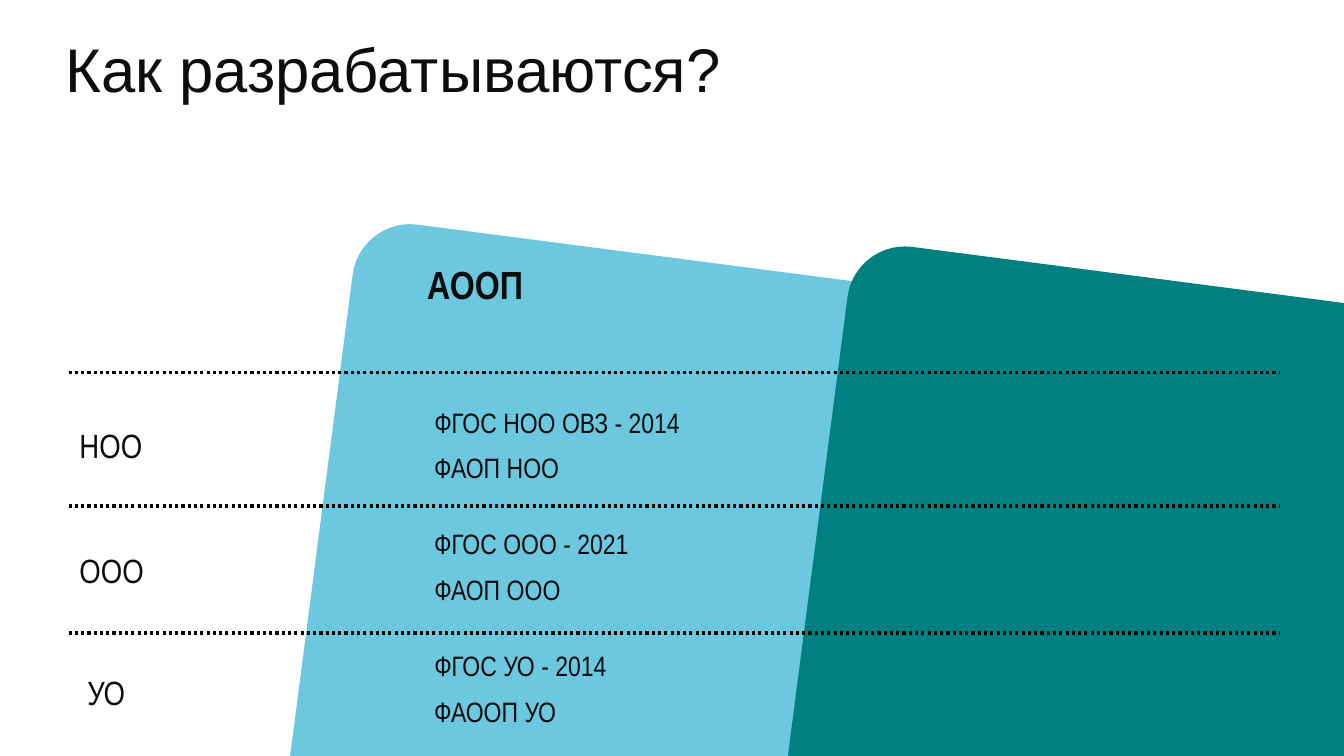
from collections import namedtuple
from dataclasses import dataclass

from lxml import etree
from pptx import Presentation
from pptx import util as u
from pptx.dml.color import RGBColor
from pptx.enum import dml, shapes, text
from pptx.oxml import ns

Box = namedtuple("Box", "left top width height")
Level = namedtuple("Level", "name top width indent sources")


@dataclass(frozen=True)
class Theme:
    ink: str = "0D0D0D"
    rule: str = "000000"
    light_panel: str = "6CC8DE"
    dark_panel: str = "008080"
    title_font: str = "Arial"
    body_font: str = "Arial Narrow"
    title_size: float = 44
    heading_size: float = 28
    level_size: float = 24
    source_size: float = 20
    rule_width: float = 2.25


THEME = Theme()

LEVELS = [
    Level("НОО", 300.2, 59.8, 0,
          [("ФГОС НОО ОВЗ - 2014", 193), ("ФАОП НОО", 105.1)]),
    Level("ООО", 389.5, 61.2, 0,
          [("ФГОС ООО - 2021", 155.5), ("ФАОП ООО", 106.6)]),
    Level("УО", 476.6, 70.6, 5.5,
          [("ФГОС УО - 2014", 140.4), ("ФАООП УО", 103.7)]),
]


def points(box):
    return [u.Pt(length) for length in box]


def add_label(slide, box, wording, size, font=THEME.body_font, bold=False, indent=0):
    label = slide.shapes.add_textbox(*points(box))
    frame = label.text_frame
    frame.text = wording
    frame.word_wrap = False
    frame.auto_size = text.MSO_AUTO_SIZE.SHAPE_TO_FIT_TEXT
    frame.margin_left = u.Pt(7.2 + indent)
    letters = frame.paragraphs[0].runs[0].font
    letters.name = font
    letters.size = u.Pt(size)
    letters.bold = bold
    letters.color.rgb = RGBColor.from_string(THEME.ink)


def add_panel(slide, box, color):
    panel = slide.shapes.add_shape(shapes.MSO_SHAPE.ROUNDED_RECTANGLE, *points(box))
    panel.adjustments[0] = 0.089
    panel.rotation = 7.4
    panel.shadow.inherit = False
    panel.fill.solid()
    panel.fill.fore_color.rgb = RGBColor.from_string(color)
    panel.line.fill.background()


def add_programme_column(slide, box):
    add_panel(slide, box, THEME.light_panel)
    heading_box = Box(box.left + 101.5, box.top + 0.8, 84.2, 41)
    add_label(slide, heading_box, "АООП", THEME.heading_size, bold=True)


def add_title(slide, box):
    add_label(slide, box, "Как разрабатываются?", THEME.title_size, THEME.title_font)


def add_sources(slide, box):
    level_pitch = box.height / len(LEVELS)
    for row, level in enumerate(LEVELS):
        for position, (source, width) in enumerate(level.sources):
            top = box.top + row * level_pitch + position * 32.4
            add_label(slide, Box(box.left, top, width, 31.7), source, THEME.source_size)


def add_levels(slide, box):
    for level in LEVELS:
        level_box = Box(box.left, level.top, level.width, 36)
        add_label(slide, level_box, level.name, THEME.level_size, indent=level.indent)


def add_rules(slide, box):
    for offset in (0, 95, box.height):
        top = u.Pt(box.top + offset)
        rule = slide.shapes.add_connector(
            shapes.MSO_CONNECTOR.STRAIGHT,
            u.Pt(box.left), top, u.Pt(box.left + box.width), top)
        rule.line.color.rgb = RGBColor.from_string(THEME.rule)
        rule.line.width = u.Pt(THEME.rule_width)
        rule.line.dash_style = dml.MSO_LINE.ROUND_DOT
        etree.SubElement(rule._element.spPr, ns.qn("a:effectLst"))


def main():
    deck = Presentation()
    deck.slide_width, deck.slide_height = u.Pt(960), u.Pt(540)
    slide = deck.slides.add_slide(deck.slide_layouts[6])

    add_programme_column(slide, Box(196.6, 181.4, 465.8, 911.5))
    add_panel(slide, Box(550.1, 197.3, 465.8, 911.5), THEME.dark_panel)
    add_title(slide, Box(39.6, 18.7, 611.3, 60.5))
    add_sources(slide, Box(303.1, 285.8, 193, 261.3))
    add_levels(slide, Box(49.7, 300.2, 70.6, 212.4))
    add_rules(slide, Box(49, 266.4, 865.4, 185.8))

    deck.save("out.pptx")


if __name__ == "__main__":
    main()
